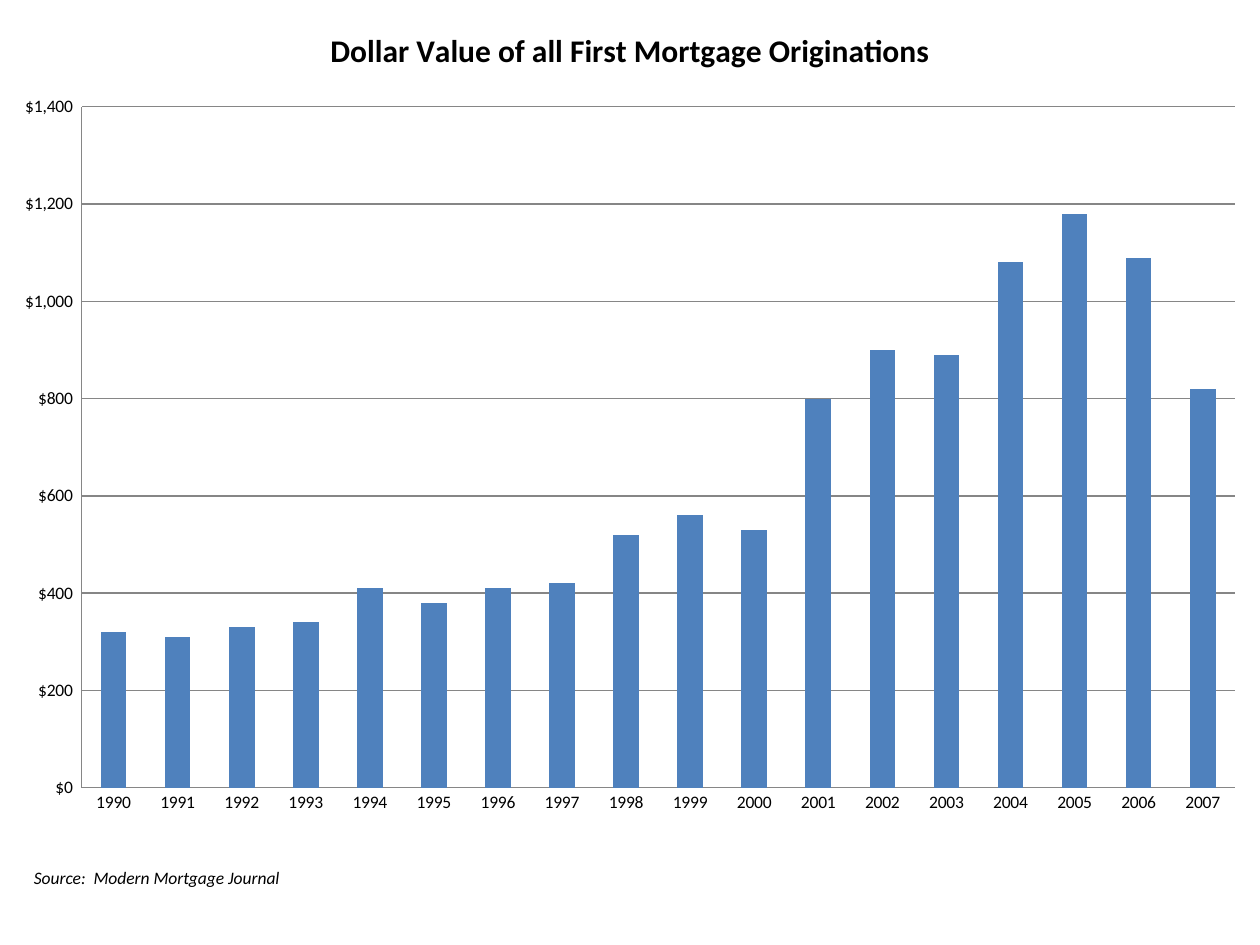
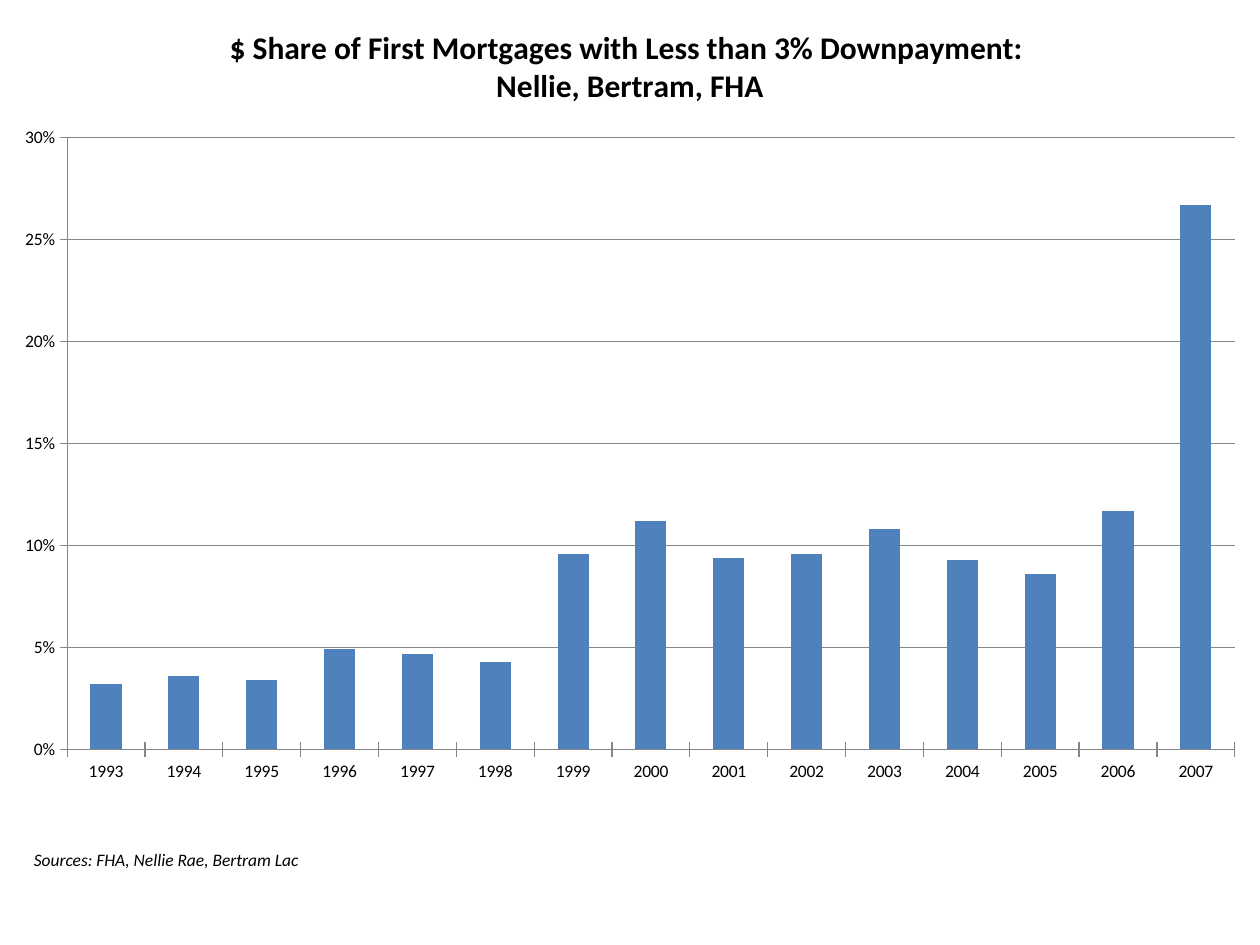
"""Build two slides of yearly mortgage column charts, each with a source line."""
import pptx
import pptx.chart.data
import pptx.dml.color
import pptx.enum.chart
import pptx.enum.text
import pptx.util

Inches, Pt = pptx.util.Inches, pptx.util.Pt
TickMark = pptx.enum.chart.XL_TICK_MARK
COLORS = {"text": "000000", "bars": "4F81BD", "lines": "868686", "background": "FFFFFF"}
FONT = "Calibri"


def rgb(role):
    return pptx.dml.color.RGBColor.from_string(COLORS[role])


def style_font(font, size, bold=False, italic=False):
    font.name, font.size = FONT, Pt(size)
    font.bold, font.italic = bold, italic
    font.color.rgb = rgb("text")


pages = [
    {
        "title": ["Dollar Value of all First Mortgage Originations"],
        "source": "Source:  Modern Mortgage Journal",
        "source_top": 6.83, "source_width": 8.17, "chart_height": 6.58,
        "first_year": 1990,
        "values": [320, 310, 330, 340, 410, 380, 410, 420, 520,
                   560, 530, 800, 900, 890, 1080, 1180, 1090, 820],
        "format": '"$"#,##0_);[Red]\\("$"#,##0\\)',
        "top_value": 1400, "step": 200, "ticks": TickMark.NONE,
    },
    {
        "title": ["$ Share of First Mortgages with Less than 3% Downpayment: ",
                  "Nellie, Bertram, FHA"],
        "source": "Sources: FHA, Nellie Rae, Bertram Lac",
        "source_top": 6.69, "source_width": 6.17, "chart_height": 6.33,
        "first_year": 1993,
        "values": [0.032, 0.036, 0.034, 0.049, 0.047, 0.043, 0.096, 0.112,
                   0.094, 0.096, 0.108, 0.093, 0.086, 0.117, 0.267],
        "format": "0%",
        "top_value": 0.3, "step": 0.05, "ticks": TickMark.CROSS,
    },
]

deck = pptx.Presentation()
deck.slide_width, deck.slide_height = Inches(10), Inches(7.5)
background = deck.slide_master.background.fill
background.solid()
background.fore_color.rgb = rgb("background")

for page in pages:
    slide = deck.slides.add_slide(deck.slide_layouts[6])

    yearly = pptx.chart.data.CategoryChartData(number_format=page["format"])
    yearly.categories = [str(page["first_year"] + i) for i in range(len(page["values"]))]
    yearly.add_series("Series 1", page["values"])
    chart = slide.shapes.add_chart(
        pptx.enum.chart.XL_CHART_TYPE.COLUMN_CLUSTERED,
        0, 0, Inches(10), Inches(page["chart_height"]), yearly).chart
    style_font(chart.font, 10)
    chart.has_legend = False

    chart.has_title = True
    chart.chart_title.include_in_layout = False
    heading = chart.chart_title.text_frame
    for i, line in enumerate(page["title"]):
        paragraph = heading.add_paragraph() if i else heading.paragraphs[0]
        run = paragraph.add_run()
        run.text = line
        style_font(run.font, 18, bold=True)

    columns = chart.plots[0]
    columns.gap_width = 150
    columns.vary_by_categories = False
    bars = columns.series[0].format.fill
    bars.solid()
    bars.fore_color.rgb = rgb("bars")

    years, amounts = chart.category_axis, chart.value_axis
    amounts.minimum_scale, amounts.maximum_scale = 0, page["top_value"]
    amounts.major_unit = page["step"]
    amounts.has_major_gridlines = True
    amounts.tick_labels.number_format = page["format"]
    amounts.tick_labels.number_format_is_linked = False
    for axis in (years, amounts):
        axis.major_tick_mark = page["ticks"]
        axis.minor_tick_mark = TickMark.NONE
    for line in (years.format.line, amounts.format.line, amounts.major_gridlines.format.line):
        line.color.rgb = rgb("lines")
        line.width = Pt(0.75)

    source = slide.shapes.add_textbox(
        Inches(0.17), Inches(page["source_top"]),
        Inches(page["source_width"]), Inches(0.27)).text_frame
    source.word_wrap = True
    source.auto_size = pptx.enum.text.MSO_AUTO_SIZE.SHAPE_TO_FIT_TEXT
    credit = source.paragraphs[0].add_run()
    credit.text = page["source"]
    style_font(credit.font, 10, italic=True)

deck.save("out.pptx")
